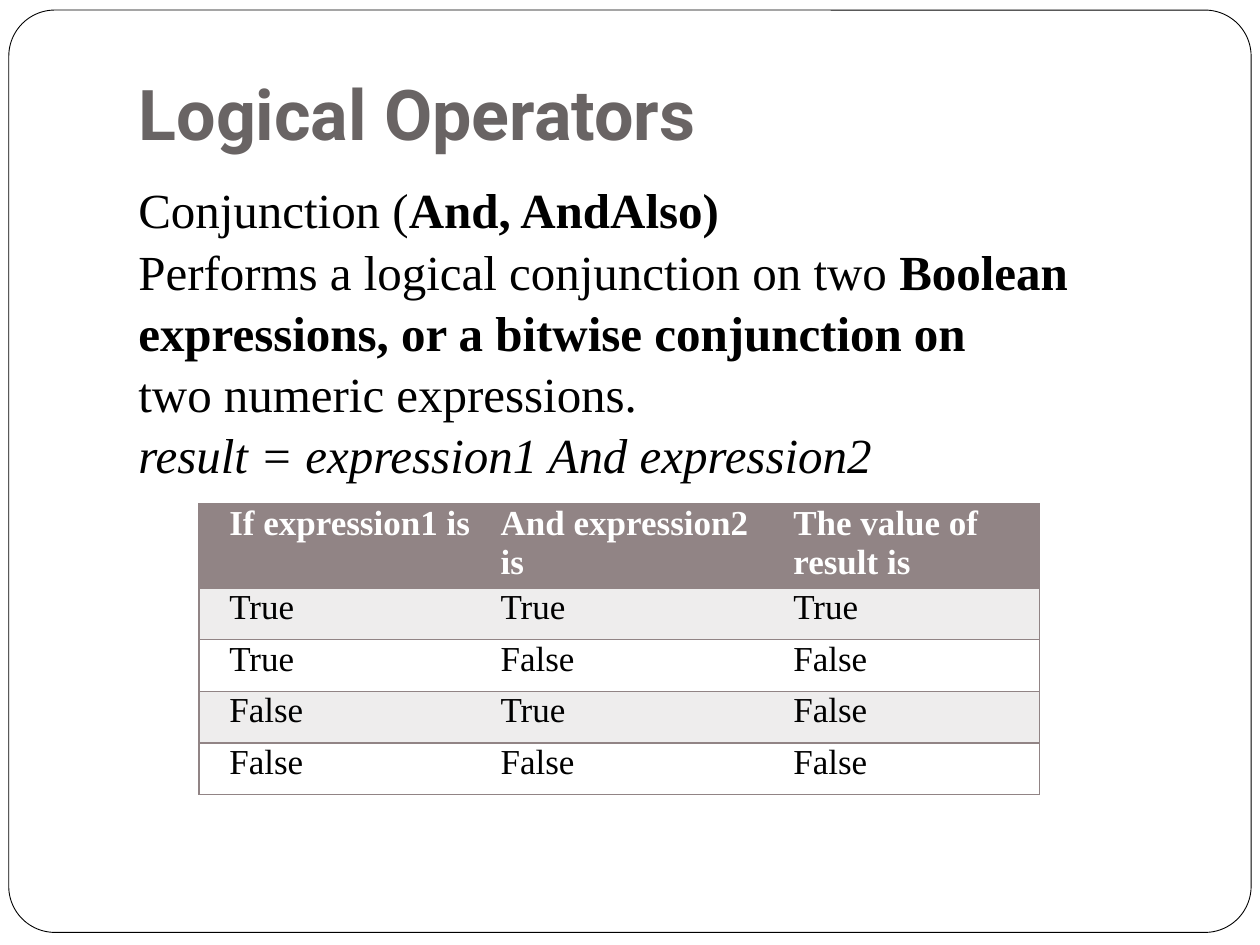
from lxml import etree
from pptx import Presentation
from pptx.dml.color import RGBColor
from pptx.enum.shapes import MSO_SHAPE
from pptx.enum.text import MSO_ANCHOR, MSO_AUTO_SIZE, PP_ALIGN
from pptx.oxml.ns import qn
from pptx.util import Inches, Pt

ROUNDED = MSO_SHAPE.ROUNDED_RECTANGLE
BOTTOM, TOP = MSO_ANCHOR.BOTTOM, MSO_ANCHOR.TOP
LEFT = PP_ALIGN.LEFT
NO_FIT = MSO_AUTO_SIZE.NONE
TITLE_ONLY = 5

SERIF = "Times New Roman"
BLACK, WHITE, GRAY, MAUVE, BAND = "000000", "FFFFFF", "696464", "918485", "EEEDED"

# Each paragraph is a list of (text, bold, italic)
EXPLANATION = [
    [("Conjunction (", False, False), ("And, AndAlso)", True, False)],
    [("Performs a logical conjunction on two ", False, False),
     ("Boolean expressions, or a bitwise conjunction on", True, False)],
    [("two numeric expressions.", False, False)],
    [("result = expression1 And expression2", False, True)],
]
TRUTH_TABLE = [
    ("If expression1 is", "And expression2 is", "The value of result is"),
    ("True", "True", "True"),
    ("True", "False", "False"),
    ("False", "True", "False"),
    ("False", "False", "False"),
]
COLUMN_INDENTS = (0.17, 0.1, 0.2)


def color(hex_code):
    return RGBColor.from_string(hex_code)


def add_run(paragraph, text, size, hex_code, font=SERIF, bold=False, italic=False):
    run = paragraph.add_run()
    run.text = text
    run.font.name = font
    run.font.size = Pt(size)
    run.font.bold = bold
    run.font.italic = italic
    run.font.color.rgb = color(hex_code)


def add_title(slide, text):
    title = slide.shapes.title
    title.left, title.top = Inches(1), Inches(0.3)
    title.width, title.height = Inches(8.5), Inches(1.03)
    frame = title.text_frame
    frame.auto_size = NO_FIT
    frame.vertical_anchor = BOTTOM
    frame.margin_bottom = Inches(0.1)
    paragraph = frame.paragraphs[0]
    paragraph.alignment = LEFT
    add_run(paragraph, text, 40, GRAY, font="Roboto", bold=True)


def add_border_frame(slide):
    border = slide.shapes.add_shape(
        ROUNDED, Inches(0.07), Inches(0.08), Inches(9.86), Inches(7.32))
    border.adjustments[0] = 0.05
    border.shadow.inherit = False
    border.fill.solid()
    border.fill.fore_color.rgb = color(WHITE)
    border.line.color.rgb = color(BLACK)
    border.line.width = Pt(0.5)
    # Put the frame behind the title
    slide.shapes.title.element.addprevious(border.element)


def add_explanation(slide, paragraphs):
    box = slide.shapes.add_textbox(Inches(1), Inches(1.33), Inches(8.5), Inches(5.92))
    frame = box.text_frame
    frame.word_wrap = True
    frame.margin_top = Inches(0.08)
    for index, runs in enumerate(paragraphs):
        paragraph = frame.add_paragraph() if index else frame.paragraphs[0]
        paragraph.line_spacing = 1.04
        for text, bold, italic in runs:
            add_run(paragraph, text, 28, BLACK, bold=bold, italic=italic)


def set_borders(cell, visible_sides):
    properties = cell._tc.get_or_add_tcPr()
    for index, side in enumerate("LRTB"):
        line = etree.Element(qn(f"a:ln{side}"), w=str(Pt(1)))
        if side in visible_sides:
            fill = etree.SubElement(line, qn("a:solidFill"))
            etree.SubElement(fill, qn("a:srgbClr"), val=MAUVE)
        else:
            etree.SubElement(line, qn("a:noFill"))
        properties.insert(index, line)


def fill_cell(cell, text, indent, background, text_color, bold):
    cell.fill.solid()
    cell.fill.fore_color.rgb = color(background)
    cell.vertical_anchor = TOP
    cell.margin_left = cell.margin_right = Inches(0.07)
    cell.margin_top = cell.margin_bottom = 0
    paragraph = cell.text_frame.paragraphs[0]
    paragraph.space_before, paragraph.space_after = Pt(0.8), Pt(3)
    properties = paragraph._p.get_or_add_pPr()
    properties.set("marL", str(Inches(indent)))
    properties.set("indent", "0")
    add_run(paragraph, text, 20, text_color, bold=bold)


def add_truth_table(slide, rows):
    row_count, column_count = len(rows), len(rows[0])
    row_height = Inches(0.41)
    table = slide.shapes.add_table(
        row_count, column_count, Inches(1.58), Inches(4),
        Inches(6.67), row_height * row_count).table
    table.first_row = table.horz_banding = False
    for row in table.rows:
        row.height = row_height
    table.rows[0].height = Inches(0.62)

    for r, values in enumerate(rows):
        header = r == 0
        background = MAUVE if header else BAND if r % 2 else WHITE
        for c, value in enumerate(values):
            cell = table.cell(r, c)
            fill_cell(cell, value, COLUMN_INDENTS[c], background,
                      WHITE if header else BLACK, header)
            outer = "L" if c == 0 else "R" if c == column_count - 1 else ""
            set_borders(cell, "TB" + outer)


def main():
    prs = Presentation()
    prs.slide_width, prs.slide_height = Inches(10), Inches(7.5)
    slide = prs.slides.add_slide(prs.slide_layouts[TITLE_ONLY])
    add_border_frame(slide)
    add_title(slide, "Logical Operators")
    add_explanation(slide, EXPLANATION)
    add_truth_table(slide, TRUTH_TABLE)
    prs.save("out.pptx")


if __name__ == "__main__":
    main()
